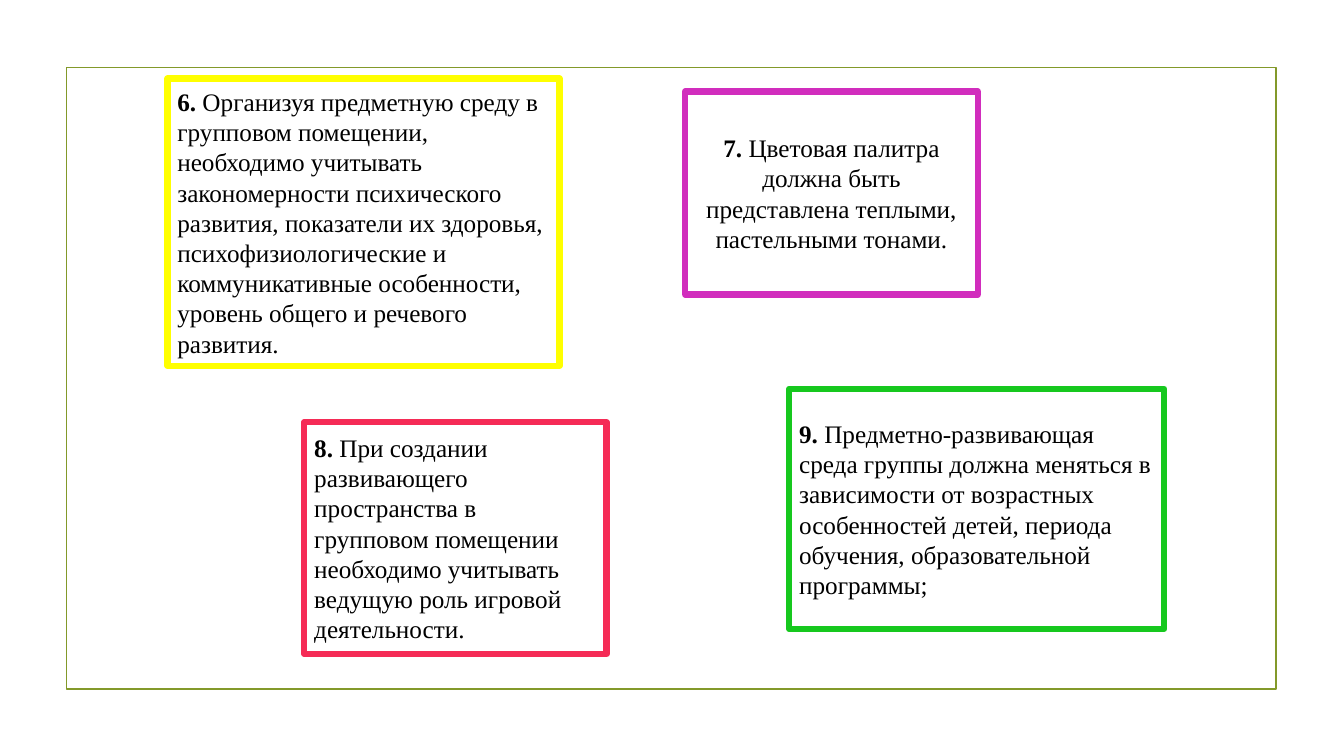
from pptx import Presentation
from pptx.dml.color import RGBColor
from pptx.enum.shapes import MSO_SHAPE
from pptx.enum.text import MSO_ANCHOR, PP_ALIGN
from pptx.util import Cm, Pt

RECTANGLE = MSO_SHAPE.RECTANGLE
MIDDLE = MSO_ANCHOR.MIDDLE
LEFT, CENTER = PP_ALIGN.LEFT, PP_ALIGN.CENTER

WHITE = RGBColor(0xFF, 0xFF, 0xFF)
BLACK = RGBColor(0x00, 0x00, 0x00)
OLIVE = RGBColor(0x83, 0x99, 0x2A)
YELLOW = RGBColor(0xFF, 0xFF, 0x00)
PURPLE = RGBColor(0xD1, 0x2D, 0xBD)
RED = RGBColor(0xF5, 0x2B, 0x56)
GREEN = RGBColor(0x16, 0xC8, 0x1E)

FONT = "Times New Roman"

# number, text, colour, alignment, (left, top, width, height) in cm
PRINCIPLES = [
    ("6.", "Организуя предметную среду в групповом помещении, необходимо "
     "учитывать закономерности психического развития, показатели их здоровья, "
     "психофизиологические и коммуникативные особенности, уровень общего "
     "и речевого развития.", YELLOW, LEFT, (4.22, 1.98, 9.88, 7.24)),
    ("7.", "Цветовая палитра должна быть представлена теплыми, пастельными "
     "тонами.", PURPLE, CENTER, (17.27, 2.31, 7.37, 5.11)),
    ("8.", "При создании развивающего пространства в групповом помещении "
     "необходимо учитывать ведущую роль игровой деятельности.",
     RED, LEFT, (7.67, 10.64, 7.62, 5.84)),
    ("9.", "Предметно-развивающая среда группы должна меняться в зависимости "
     "от возрастных особенностей детей, периода обучения, образовательной "
     "программы;", GREEN, LEFT, (19.89, 9.8, 9.45, 6.05)),
]


def add_outlined_box(slide, box, color, line_width):
    sp = slide.shapes.add_shape(RECTANGLE, *(Cm(v) for v in box))
    sp.shadow.inherit = False
    sp.fill.background()
    sp.line.color.rgb = color
    sp.line.width = Pt(line_width)
    return sp


def add_principle(slide, number, text, color, alignment, box):
    """Add a white card with a bold number before its text."""
    sp = add_outlined_box(slide, box, color, 4.5)
    sp.fill.solid()
    sp.fill.fore_color.rgb = WHITE
    tf = sp.text_frame
    tf.word_wrap = True
    tf.vertical_anchor = MIDDLE
    p = tf.paragraphs[0]
    p.alignment = alignment
    p.font.name = FONT
    p.font.size = Pt(18)
    p.font.color.rgb = BLACK
    r = p.add_run()
    r.text = number
    r.font.bold = True
    p.add_run().text = " " + text


def main():
    prs = Presentation()
    prs.slide_width, prs.slide_height = Cm(33.87), Cm(19.05)
    slide = prs.slides.add_slide(prs.slide_layouts[6])
    add_outlined_box(slide, (1.68, 1.7, 30.48, 15.67), OLIVE, 1.25)
    for principle in PRINCIPLES:
        add_principle(slide, *principle)
    prs.save("out.pptx")


if __name__ == "__main__":
    main()
